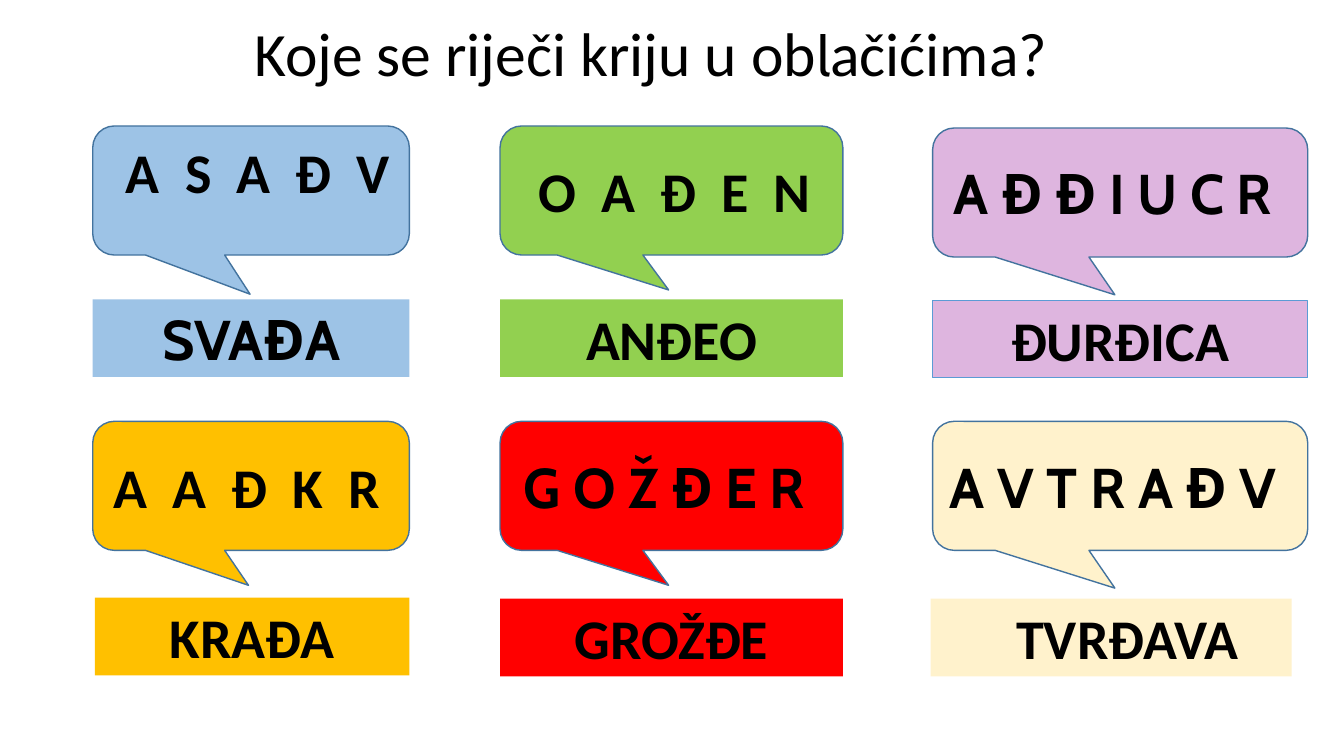
from dataclasses import dataclass

from lxml.etree import SubElement
from pptx import Presentation
from pptx.dml.color import RGBColor
from pptx.enum.shapes import MSO_SHAPE as Shape
from pptx.enum.text import MSO_ANCHOR as Anchor, PP_ALIGN as Align
from pptx.oxml.ns import qn
from pptx.util import Inches, Pt

BLACK = RGBColor(0x00, 0x00, 0x00)
BLUE = RGBColor(0x9D, 0xC3, 0xE6)
GREEN = RGBColor(0x92, 0xD0, 0x50)
PINK = RGBColor(0xC9, 0x85, 0xCB)
AMBER = RGBColor(0xFF, 0xC0, 0x00)
RED = RGBColor(0xFF, 0x00, 0x00)
CREAM = RGBColor(0xFF, 0xF2, 0xCC)
BUBBLE_LINE = RGBColor(0x43, 0x73, 0x9E)
LABEL_LINE = RGBColor(0x5B, 0x9B, 0xD5)

BUBBLE_HEIGHT = 1.28
LABEL_HEIGHT = 0.77


@dataclass
class Card:
    """A scrambled word in a bubble with its answer below."""

    box: tuple
    letters: str
    answer: str
    color: RGBColor
    tail: tuple
    letter_font: str = "Calibri"
    answer_font: str = "Calibri"
    letter_spacing: float = 0
    letter_shift: float = -0.07
    answer_shift: float = 0
    label_inset: tuple = (0, 0)
    anchor: Anchor = Anchor.MIDDLE
    opacity: int = 100
    outlined: bool = False


def paint(shape, card):
    """Fill a shape with the card colour and opacity."""
    shape.shadow.inherit = False
    shape.fill.solid()
    shape.fill.fore_color.rgb = card.color
    if card.opacity < 100:
        color = shape.fill._xPr.find(qn("a:solidFill"))[0]
        SubElement(color, qn("a:alpha")).set("val", str(card.opacity * 1000))


def write_word(shape, word, font, shift, anchor, spacing=0):
    """Write a bold word, moved sideways from the centre of its shape."""
    frame = shape.text_frame
    frame.word_wrap = True
    frame.vertical_anchor = anchor
    frame.margin_left = Inches(max(0, 2 * shift))
    frame.margin_right = Inches(max(0, -2 * shift))
    para = frame.paragraphs[0]
    para.alignment = Align.CENTER
    span = para.add_run()
    span.text = word
    para.font.name = font
    para.font.size = Pt(40)
    para.font.bold = True
    para.font.color.rgb = BLACK
    if spacing:
        span.font._element.set("spc", str(int(spacing * 100)))


def add_title(page, left, top, width, height):
    """Add the question across the top of the slide."""
    box = page.shapes.add_textbox(*map(Inches, (left, top, width, height)))
    frame = box.text_frame
    frame.word_wrap = True
    frame.vertical_anchor = Anchor.MIDDLE
    frame.margin_left = Inches(0.48)
    para = frame.paragraphs[0]
    para.line_spacing = 0.9
    para.font.color.rgb = BLACK
    for text, font, size in (
        ("Koje se riječi kriju u ob", "Calibri", 44),
        ("l", "Cabin", 40),
        ("ačićima?", "Calibri", 44),
    ):
        span = para.add_run()
        span.text = text
        span.font.name = font
        span.font.size = Pt(size)


def add_card(page, card):
    """Add a speech bubble and the answer label at the foot of the card."""
    left, top, width, height = card.box
    bubble = page.shapes.add_shape(
        Shape.ROUNDED_RECTANGULAR_CALLOUT,
        *map(Inches, (left, top, width, BUBBLE_HEIGHT)))
    for index, value in enumerate((*card.tail, 0.167)):
        bubble.adjustments[index] = value
    paint(bubble, card)
    bubble.line.color.rgb = BUBBLE_LINE
    bubble.line.width = Pt(1)
    write_word(bubble, card.letters, card.letter_font, card.letter_shift,
               card.anchor, card.letter_spacing)

    inset_left, inset_right = card.label_inset
    label = page.shapes.add_shape(
        Shape.RECTANGLE,
        *map(Inches, (left + inset_left, top + height - LABEL_HEIGHT,
                      width - inset_left - inset_right, LABEL_HEIGHT)))
    paint(label, card)
    if card.outlined:
        label.line.color.rgb = LABEL_LINE
        label.line.width = Pt(0.75)
    else:
        label.line.fill.background()
    write_word(label, card.answer, card.answer_font, card.answer_shift, Anchor.TOP)


CARDS = (
    Card((0.92, 1.25, 3.14, 2.49), "A S A Đ V", "SVAĐA", BLUE, (-0.003, 0.804),
         answer_font="Cabin", letter_spacing=4.5, letter_shift=0.07,
         anchor=Anchor.TOP),
    Card((4.96, 1.25, 3.4, 2.49), "O A Đ E N", "ANĐEO", GREEN, (-0.008, 0.771),
         letter_spacing=4.5, letter_shift=0.03),
    Card((9.25, 1.27, 3.72, 2.48), "A Đ Đ I U C R", "ĐURĐICA", PINK,
         (-0.014, 0.793), letter_font="Cabin", opacity=60, outlined=True),
    Card((0.92, 4.18, 3.14, 2.52), "A A Đ K R", "KRAĐA", AMBER, (-0.008, 0.771),
         letter_spacing=4.5, letter_shift=-0.04, label_inset=(0.02, 0)),
    Card((4.96, 4.18, 3.4, 2.53), "G O Ž Đ E R", "GROŽĐE", RED, (-0.008, 0.771),
         letter_font="Cabin"),
    Card((9.25, 4.18, 3.72, 2.53), "A V T R A Đ V", "TVRĐAVA", CREAM,
         (-0.014, 0.793), letter_font="Cabin", answer_shift=0.16,
         label_inset=(-0.02, 0.16)),
)


def main():
    """Build the word puzzle slide."""
    deck = Presentation()
    deck.slide_width = Inches(13.33)
    deck.slide_height = Inches(7.5)
    page = deck.slides.add_slide(deck.slide_layouts[6])
    add_title(page, 2.04, 0.09, 10.59, 0.94)
    for card in CARDS:
        add_card(page, card)
    deck.save("out.pptx")


if __name__ == "__main__":
    main()
